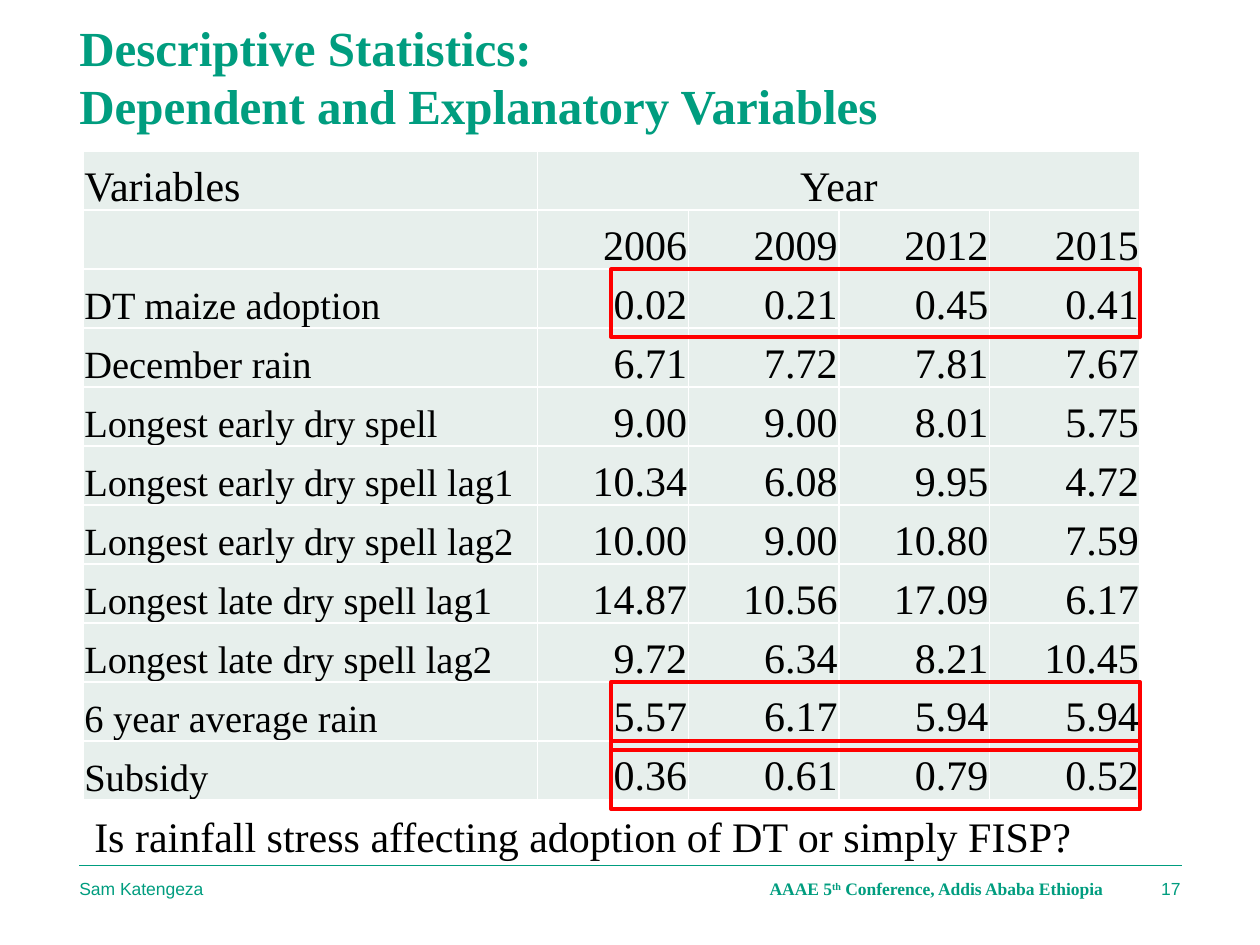
"""Build the descriptive statistics slide with its table, highlights and footer."""
import dataclasses

import pptx
import pptx.dml.color
import pptx.enum.shapes
import pptx.enum.text
import pptx.oxml
import pptx.oxml.ns
import pptx.util

ALIGN = pptx.enum.text.PP_ALIGN
ANCHOR = pptx.enum.text.MSO_ANCHOR
SLIDE_SIZE = (pptx.util.Inches(10), pptx.util.Inches(7.5))
TABLE_BOX = (6.6, 16, 83.9, 68.67)
LABEL_SHARE = 0.43
HIGHLIGHT_LEFT, HIGHLIGHT_WIDTH, HIGHLIGHT_HEIGHT = 48.5, 42, 7.2
HIGHLIGHTED_ROWS = (2, 9, 10)
FOOTER_TOP, FOOTER_HEIGHT = 92.93, 2.27

ROWS = [
    ("Variables", "Year", "", "", ""),
    ("", "2006", "2009", "2012", "2015"),
    ("DT maize adoption", "0.02", "0.21", "0.45", "0.41"),
    ("December rain", "6.71", "7.72", "7.81", "7.67"),
    ("Longest early dry spell", "9.00", "9.00", "8.01", "5.75"),
    ("Longest early dry spell lag1", "10.34", "6.08", "9.95", "4.72"),
    ("Longest early dry spell lag2", "10.00", "9.00", "10.80", "7.59"),
    ("Longest late dry spell lag1", "14.87", "10.56", "17.09", "6.17"),
    ("Longest late dry spell lag2", "9.72", "6.34", "8.21", "10.45"),
    ("6 year average rain", "5.57", "6.17", "5.94", "5.94"),
    ("Subsidy", "0.36", "0.61", "0.79", "0.52"),
]


@dataclasses.dataclass(frozen=True)
class Theme:
    """Colours, fonts and type sizes of the slide."""

    green: str = "009D7F"
    black: str = "000000"
    red: str = "FF0000"
    white: str = "FFFFFF"
    cell: str = "E7EFEC"
    serif: str = "Times New Roman"
    sans: str = "Arial"
    title: int = 28
    body: int = 24
    label: int = 22
    footer: int = 10


THEME = Theme()


def set_attributes(target, values):
    """Set every named value on the target."""
    for name, value in values.items():
        setattr(target, name, value)


def colour(code):
    """Return the colour for a hexadecimal code."""
    return pptx.dml.color.RGBColor.from_string(code)


def place(left, top, width, height):
    """Turn percentages of the slide into lengths."""
    return [
        pptx.util.Emu(round(share * SLIDE_SIZE[index % 2] / 100))
        for index, share in enumerate((left, top, width, height))
    ]


def margins(left, top, right, bottom):
    """Return margin values in inches for a text frame or a cell."""
    names = ("margin_left", "margin_top", "margin_right", "margin_bottom")
    return dict(zip(names, map(pptx.util.Inches, (left, top, right, bottom))))


def write(frame, pieces, size, code, align=ALIGN.LEFT, name=THEME.serif, bold=False):
    """Write pieces of text in one paragraph, raising every second piece."""
    paragraph = frame.paragraphs[0]
    paragraph.alignment = align
    paragraph.text = pieces[0]
    for index, piece in enumerate(pieces[1:]):
        run = paragraph.add_run()
        run.text = piece
        if index % 2 == 0:
            run.font._element.set("baseline", "30000")
    for run in paragraph.runs:
        set_attributes(run.font, {"name": name, "size": pptx.util.Pt(size), "bold": bold})
        run.font.color.rgb = colour(code)


def add_text(slide, box, pieces, size, code, anchor=ANCHOR.MIDDLE, inset=(0, 0), **style):
    """Add a wrapped text box."""
    frame = slide.shapes.add_textbox(*place(*box)).text_frame
    set_attributes(
        frame, {"word_wrap": True, "vertical_anchor": anchor, **margins(*inset, *inset)}
    )
    write(frame, pieces, size, code, **style)


def add_borders(cell):
    """Give a cell thin white borders on all sides."""
    properties = cell._tc.get_or_add_tcPr()
    for index, side in enumerate(("lnL", "lnR", "lnT", "lnB")):
        border = pptx.oxml.parse_xml(
            f'<a:{side} {pptx.oxml.ns.nsdecls("a")} w="12700"><a:solidFill>'
            f'<a:srgbClr val="{THEME.white}"/></a:solidFill></a:{side}>'
        )
        properties.insert(index, border)


def format_cell(cell, text, row, column):
    """Fill, border and write one cell."""
    cell.fill.solid()
    cell.fill.fore_color.rgb = colour(THEME.cell)
    add_borders(cell)
    if not text:
        return
    set_attributes(cell, {"vertical_anchor": ANCHOR.BOTTOM, **margins(0.01, 0.01, 0.01, 0)})
    size = THEME.label if column == 0 and row > 0 else THEME.body
    align = ALIGN.LEFT if column == 0 else ALIGN.CENTER if row == 0 else ALIGN.RIGHT
    write(cell.text_frame, [text], size, THEME.black, align)


def add_statistics(slide):
    """Add the table of variables by year."""
    box = place(*TABLE_BOX)
    table = slide.shapes.add_table(len(ROWS), len(ROWS[0]), *box).table
    set_attributes(table, {"first_row": False, "horz_banding": False})
    label_width = round(box[2] * LABEL_SHARE)
    year_width = (box[2] - label_width) // (len(ROWS[0]) - 1)
    for index, column in enumerate(table.columns):
        column.width = year_width if index else label_width
    for row in table.rows:
        row.height = box[3] // len(ROWS)
    table.cell(0, 1).merge(table.cell(0, len(ROWS[0]) - 1))
    for row, texts in enumerate(ROWS):
        for column, text in enumerate(texts):
            format_cell(table.cell(row, column), text, row, column)


def add_highlight(slide, row):
    """Outline the yearly values of a table row."""
    top = TABLE_BOX[1] + row * TABLE_BOX[3] / len(ROWS)
    box = place(HIGHLIGHT_LEFT, top, HIGHLIGHT_WIDTH, HIGHLIGHT_HEIGHT)
    shape = slide.shapes.add_shape(pptx.enum.shapes.MSO_SHAPE.RECTANGLE, *box)
    shape.shadow.inherit = False
    shape.fill.background()
    shape.line.color.rgb = colour(THEME.red)
    shape.line.width = pptx.util.Pt(2)


def add_rule(slide):
    """Draw the line above the footer."""
    line = slide.shapes.add_connector(
        pptx.enum.shapes.MSO_CONNECTOR.STRAIGHT, *place(6.3, 91.6, 93.8, 91.6)
    )
    line.line.color.rgb = colour(THEME.green)
    line.line.width = pptx.util.Pt(1)
    effects = pptx.oxml.parse_xml(f'<a:effectLst {pptx.oxml.ns.nsdecls("a")}/>')
    line._element.spPr.append(effects)


def add_footer(slide, left, width, pieces, **style):
    """Add one text of the footer row."""
    box = (left, FOOTER_TOP, width, FOOTER_HEIGHT)
    add_text(slide, box, pieces, THEME.footer, THEME.green, **style)


def main():
    """Build and save the slide."""
    presentation = pptx.Presentation()
    set_attributes(presentation, dict(zip(("slide_width", "slide_height"), SLIDE_SIZE)))
    slide = presentation.slides.add_slide(presentation.slide_layouts[6])
    add_rule(slide)
    title = ["Descriptive Statistics: \vDependent and Explanatory Variables"]
    add_text(slide, (6.3, 1.73, 80.7, 12.53), title, THEME.title, THEME.green,
             anchor=ANCHOR.BOTTOM, bold=True)
    conference = ["AAAE 5", "th", " Conference, Addis Ababa Ethiopia"]
    add_footer(slide, 58.5, 31.6, conference, align=ALIGN.CENTER, bold=True)
    add_footer(slide, 90.4, 3.3, ["17"], align=ALIGN.RIGHT, name=THEME.sans)
    add_footer(slide, 6.3, 52, ["Sam Katengeza"], name=THEME.sans)
    add_statistics(slide)
    for row in HIGHLIGHTED_ROWS:
        add_highlight(slide, row)
    question = ["Is rainfall stress affecting adoption of DT or simply FISP?"]
    add_text(slide, (6.5, 85.07, 87.4, 6.67), question, THEME.body, THEME.black,
             inset=(0.1, 0.05), align=ALIGN.JUSTIFY)
    presentation.save("out.pptx")


if __name__ == "__main__":
    main()
